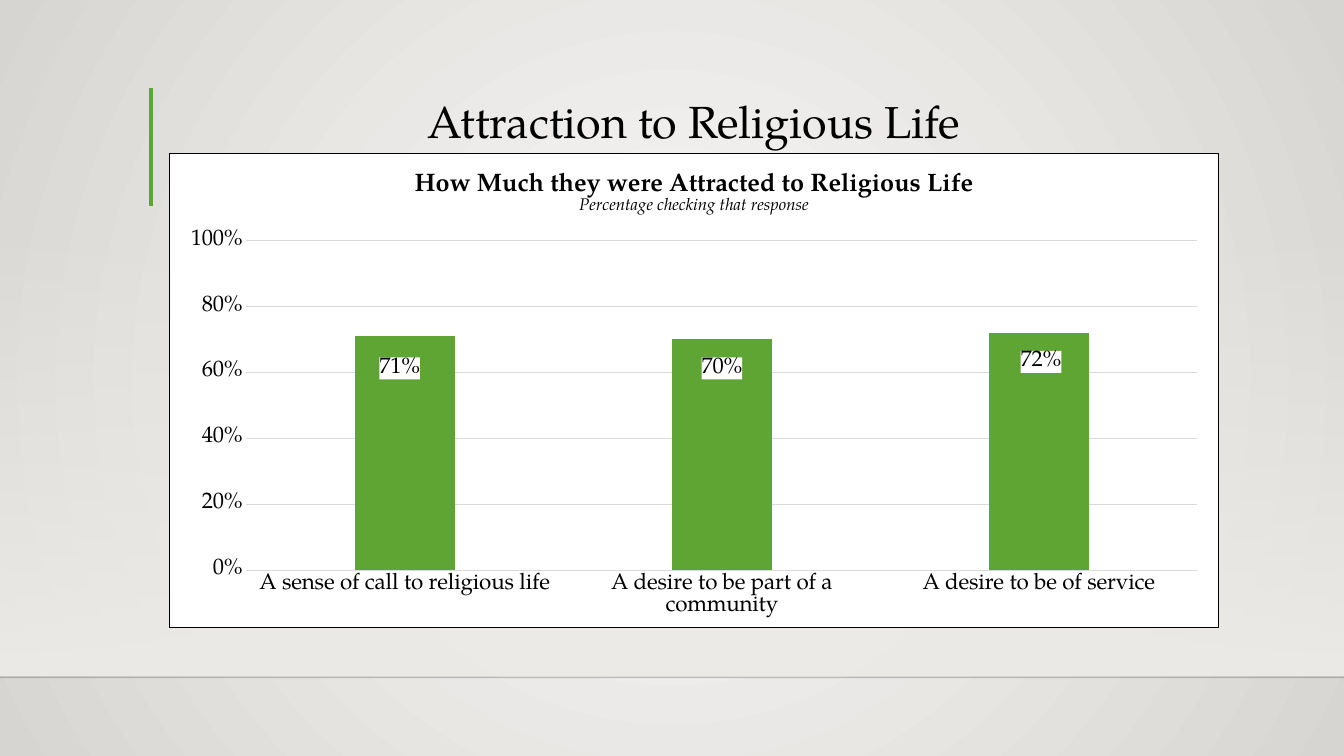
from lxml import etree
from pptx import Presentation
from pptx.chart.data import CategoryChartData
from pptx.dml.color import RGBColor
from pptx.enum.chart import XL_CHART_TYPE, XL_LABEL_POSITION, XL_TICK_MARK
from pptx.enum.shapes import MSO_CONNECTOR, MSO_SHAPE
from pptx.enum.text import MSO_ANCHOR, PP_ALIGN
from pptx.oxml import parse_xml
from pptx.oxml.ns import nsdecls, qn
from pptx.util import Inches, Pt

# Content
TITLE = "Attraction to Religious Life"
CHART_TITLE = [  # text, size, bold, italic
    ("How Much they were Attracted to Religious Life", 18, True, False),
    ("Percentage checking that response", 12, False, True),
]
REASONS = [  # reason, share, label shift as fractions of the chart
    ("A sense of call to religious life", 0.71, (-0.005, 0.037)),
    ("A desire to be part of a community", 0.70, (0, 0.03)),
    ("A desire to be of service", 0.72, (0.002, 0.03)),
]
PLOT_AREA = {"x": 0.073, "y": 0.183, "w": 0.907, "h": 0.696}

FONT = "TeX Gyre Pagella"
BLACK, WHITE, GREEN, GRID = "000000", "FFFFFF", "5FA534", "D9D9D9"
WIDTH, HEIGHT = 13.33, 7.5
LEFT, CONTENT_WIDTH = 1.68, 10.41
FLOOR_Y = 6.72


def color(value):
    return RGBColor.from_string(value)


def set_font(font, size, bold=False, italic=False):
    font.name, font.size, font.bold, font.italic = FONT, Pt(size), bold, italic
    font.color.rgb = color(BLACK)


def set_line(line, value, width):
    line.color.rgb = color(value)
    line.width = Pt(width)


def gradient(stops, direction):
    marks = "".join(
        f'<a:gs pos="{pos}"><a:srgbClr val="{value}"><a:alpha val="{alpha}"/></a:srgbClr></a:gs>'
        for pos, value, alpha in stops)
    return parse_xml(f'<a:gradFill {nsdecls("a")} rotWithShape="1">'
                     f"<a:gsLst>{marks}</a:gsLst>{direction}</a:gradFill>")


def replace_gradient(parent, new_fill):
    old_fill = parent.find(qn("a:gradFill"))
    parent.replace(old_fill, new_fill)


def remove_children(parent, *tags):
    for tag in tags:
        for child in parent.findall(qn(tag)):
            parent.remove(child)


def add_rule(start, end, value, width):
    rule = slide.shapes.add_connector(
        MSO_CONNECTOR.STRAIGHT, *(Inches(n) for n in start + end))
    set_line(rule.line, value, width)
    etree.SubElement(rule.element.spPr, qn("a:effectLst"))
    return rule


def layout_xml(places, inner=False):
    target = '<c:layoutTarget val="inner"/>' if inner else ""
    modes = '<c:xMode val="edge"/><c:yMode val="edge"/>' if inner else ""
    values = "".join(f'<c:{key} val="{value}"/>' for key, value in places.items())
    return parse_xml(f'<c:layout {nsdecls("c")}><c:manualLayout>'
                     f"{target}{modes}{values}</c:manualLayout></c:layout>")


def shape_properties(fill, line="<a:ln><a:noFill/></a:ln>"):
    return parse_xml(f'<c:spPr {nsdecls("c", "a")}><a:solidFill><a:srgbClr val="{fill}"/>'
                     f"</a:solidFill>{line}</c:spPr>")


presentation = Presentation()
presentation.slide_width, presentation.slide_height = Inches(WIDTH), Inches(HEIGHT)
slide = presentation.slides.add_slide(presentation.slide_layouts[5])

# Background and floor
slide.background.fill.gradient()
center = '<a:path path="circle"><a:fillToRect l="50000" t="50000" r="50000" b="50000"/></a:path>'
replace_gradient(slide.element.find(".//" + qn("p:bgPr")),
                 gradient([(0, "FAFAF9", 100000), (100000, "D7D5D2", 100000)], center))

haze = slide.shapes.add_shape(
    MSO_SHAPE.RECTANGLE, 0, Inches(2.2), Inches(WIDTH), Inches(4.5))
haze.shadow.inherit = False
haze.line.fill.background()
haze.fill.gradient()
replace_gradient(haze.element.spPr,
                 gradient([(0, "EDEBE7", 0), (100000, "EDEBE7", 100000)],
                          '<a:lin ang="5400000" scaled="0"/>'))

floor = add_rule((0, FLOOR_Y), (WIDTH, FLOOR_Y), "000001", 1)
floor_color = floor.element.spPr.find(".//" + qn("a:srgbClr"))
etree.SubElement(floor_color, qn("a:alpha")).set("val", "20000")
add_rule((1.5, 0.87), (1.5, 2.04), GREEN, 3)

# Title
title = slide.shapes.title
title.left, title.top = Inches(LEFT), Inches(0.88)
title.width, title.height = Inches(CONTENT_WIDTH), Inches(0.64)
title.text_frame.text = TITLE
title.text_frame.vertical_anchor = MSO_ANCHOR.BOTTOM
heading = title.text_frame.paragraphs[0]
heading.alignment = PP_ALIGN.CENTER
heading.line_spacing = 0.9
set_font(heading.font, 32)

# Chart
data = CategoryChartData(number_format="0%")
data.categories = [reason for reason, _, _ in REASONS]
data.add_series("Series 1", [share for _, share, _ in REASONS])
chart = slide.shapes.add_chart(
    XL_CHART_TYPE.COLUMN_CLUSTERED, Inches(LEFT), Inches(1.52),
    Inches(CONTENT_WIDTH), Inches(4.71), data).chart
set_font(chart.font, 10)
chart.has_legend = False

# Chart frame and plot area
border = (f'<a:ln w="{Pt(0.75)}"><a:solidFill><a:srgbClr val="{BLACK}"/>'
          "</a:solidFill></a:ln>")
chart_space = chart.element
chart_space.find(qn("c:chart")).addnext(shape_properties(WHITE, border))
plot_area = chart_space.find(".//" + qn("c:plotArea"))
remove_children(plot_area, "c:layout")
plot_area.insert(0, layout_xml(PLOT_AREA, inner=True))

# Chart title
chart_heading = chart.chart_title.text_frame
for index, (text, size, bold, italic) in enumerate(CHART_TITLE):
    paragraph = chart_heading.add_paragraph() if index else chart_heading.paragraphs[0]
    paragraph.text = text
    set_font(paragraph.font, size, bold, italic)
chart.chart_title.include_in_layout = False

# Axes
reason_axis, share_axis = chart.category_axis, chart.value_axis
for axis in (reason_axis, share_axis):
    axis.major_tick_mark = axis.minor_tick_mark = XL_TICK_MARK.NONE
    set_font(axis.tick_labels.font, 16)
set_line(reason_axis.format.line, GRID, 0.75)
share_axis.format.line.fill.background()
share_axis.minimum_scale, share_axis.maximum_scale, share_axis.major_unit = 0, 1, 0.2
share_axis.tick_labels.number_format = "0%"
share_axis.tick_labels.number_format_is_linked = False
share_axis.has_major_gridlines = True
set_line(share_axis.major_gridlines.format.line, GRID, 0.75)

# Columns and their labels
plot = chart.plots[0]
plot.gap_width = 219
plot.vary_by_categories = False
shares = plot.series[0]
shares.format.fill.solid()
shares.format.fill.fore_color.rgb = color(GREEN)
labels = shares.data_labels
labels.show_value = True
labels.number_format, labels.number_format_is_linked = "0%", False
set_font(labels.font, 16)
for index in range(len(REASONS)):
    label = shares.points[index].data_label
    set_font(label.font, 16)
    label.position = XL_LABEL_POSITION.INSIDE_END

# White label boxes, shifted down into the columns
label_group = chart_space.find(".//" + qn("c:ser")).find(qn("c:dLbls"))
for point_label in label_group.findall(qn("c:dLbl")):
    remove_children(point_label, "c:layout", "c:spPr")
    mark = point_label.find(qn("c:idx"))
    shift_x, shift_y = REASONS[int(mark.get("val"))][2]
    point_label.find(qn("c:txPr")).addprevious(shape_properties(WHITE))
    mark.addnext(layout_xml({"x": shift_x, "y": shift_y}))
remove_children(label_group, "c:spPr", "c:showLeaderLines")
label_group.find(qn("c:txPr")).addprevious(shape_properties(WHITE))

# No leader lines
etree.SubElement(label_group, qn("c:showLeaderLines")).set("val", "0")
label_group.append(parse_xml(
    f'<c:extLst {nsdecls("c")}><c:ext uri="{{CE6537A1-D6FC-4f65-9D91-7224C49458BB}}" '
    'xmlns:c15="http://schemas.microsoft.com/office/drawing/2012/chart">'
    '<c15:showLeaderLines val="0"/></c:ext></c:extLst>'))

presentation.save("out.pptx")
